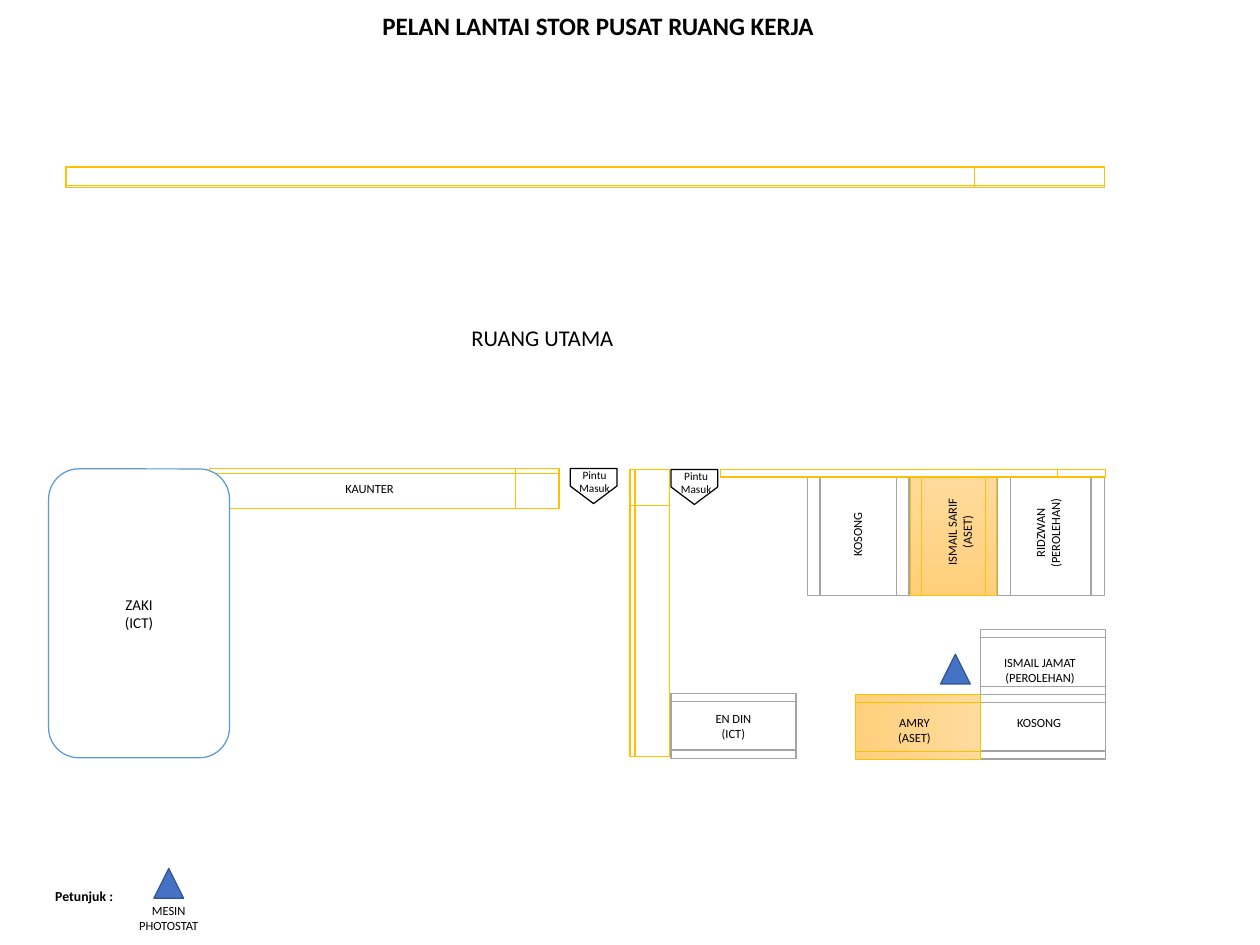
from dataclasses import dataclass
from typing import Any

import pptx
import pptx.dml.color
import pptx.enum.shapes
import pptx.enum.text
import pptx.util

Pt = pptx.util.Pt
RGBColor = pptx.dml.color.RGBColor
Shape = pptx.enum.shapes.MSO_SHAPE
Align = pptx.enum.text.PP_ALIGN
Anchor = pptx.enum.text.MSO_ANCHOR

BLACK = RGBColor(0x00, 0x00, 0x00)
WHITE = RGBColor(0xFF, 0xFF, 0xFF)
GOLD = RGBColor(0xFF, 0xC0, 0x00)
GRAY = RGBColor(0xA5, 0xA5, 0xA5)
SKY = RGBColor(0x5B, 0x9B, 0xD5)
BLUE = RGBColor(0x44, 0x72, 0xC4)
NAVY = RGBColor(0x32, 0x54, 0x91)
ASSET_LIGHT = RGBColor(0xFF, 0xDB, 0x9E)
ASSET_DARK = RGBColor(0xFF, 0xD0, 0x7C)

WALL = Shape.FLOWCHART_INTERNAL_STORAGE
DESK = Shape.FLOWCHART_PREDEFINED_PROCESS
DOOR = Shape.PENTAGON
COPIER = Shape.ISOSCELES_TRIANGLE

DESK_WIDTH, DESK_HEIGHT = 100.1, 51.8
LABEL_LENGTH, ONE_LINE, TWO_LINES = 79.9, 19.4, 31.7


@dataclass
class Area:
    """Bounds as seen on the plan, after any rotation."""
    left: float
    top: float
    width: float
    height: float
    rotation: int = 0

    def frame(self) -> list[Any]:
        width, height = self.width, self.height
        if self.rotation % 180:
            width, height = height, width
        left = self.left + (self.width - width) / 2
        top = self.top + (self.height - height) / 2
        return [Pt(value) for value in (left, top, width, height)]


@dataclass
class Fixture:
    kind: Any
    area: Area
    line: RGBColor = GRAY
    fill: RGBColor | None = WHITE
    weight: float = 1
    flipped: bool = False


@dataclass
class Label:
    lines: list[str]
    area: Area
    size: float = 10
    bold: bool = False
    wrap: bool = True


def apply(target: Any, values: dict[str, Any]) -> None:
    for name, value in values.items():
        setattr(target, name, value)


def write(box: Any, lines: list[str], size: float, bold: bool = False,
          wrap: bool = True, anchor: Any = Anchor.TOP) -> None:
    frame = box.text_frame
    apply(frame, {"word_wrap": wrap, "vertical_anchor": anchor,
                  "auto_size": pptx.enum.text.MSO_AUTO_SIZE.NONE})
    for index, line in enumerate(lines):
        para = frame.add_paragraph() if index else frame.paragraphs[0]
        para.alignment = Align.CENTER if wrap else Align.LEFT
        span = para.add_run()
        span.text = line
        apply(span.font, {"name": "Calibri", "size": Pt(size), "bold": bold})
        span.font.color.rgb = BLACK


def draw_fixture(page: Any, fixture: Fixture) -> Any:
    box = page.shapes.add_shape(fixture.kind, *fixture.area.frame())
    box.rotation = fixture.area.rotation
    box.shadow.inherit = False
    if fixture.fill is None:
        box.fill.gradient()
        box.fill.gradient_angle = 270
        for stop, color in zip(box.fill.gradient_stops, (ASSET_LIGHT, ASSET_DARK)):
            stop.color.rgb = color
        for stop, position in zip(box.fill.gradient_stops, (0, 1)):
            stop.position = position
    else:
        box.fill.solid()
        box.fill.fore_color.rgb = fixture.fill
    box.line.color.rgb = fixture.line
    box.line.width = Pt(fixture.weight)
    if fixture.flipped:
        box._element.spPr.xfrm.set("flipH", "1")
    return box


def draw_label(page: Any, label: Label) -> None:
    box = page.shapes.add_textbox(*label.area.frame())
    box.rotation = label.area.rotation
    write(box, label.lines, label.size, label.bold, label.wrap)


def flat_desk(left: float, top: float) -> Area:
    return Area(left, top, DESK_WIDTH, DESK_HEIGHT, 90)


def upright_desk(left: float, top: float, width: float) -> Area:
    return Area(left, top, width, DESK_WIDTH)


def flat_label(left: float, top: float, height: float = TWO_LINES) -> Area:
    return Area(left, top, LABEL_LENGTH, height)


def upright_label(left: float, top: float, width: float = TWO_LINES) -> Area:
    return Area(left, top, width, LABEL_LENGTH, 270)


FIXTURES = [
    Fixture(WALL, Area(167.8, 375.1, 279.4, 31.7, 90), GOLD),
    Fixture(DOOR, Area(456.1, 374.8, 37.4, 28.1, 90), BLACK),
    Fixture(DESK, flat_desk(784.4, 555.5)),
    Fixture(DESK, upright_desk(645.8, 376.6, 81.4)),
    Fixture(DESK, flat_desk(536.8, 554.8)),
    Fixture(DESK, flat_desk(684.4, 555.5), GOLD, None, 0.5),
    Fixture(DOOR, Area(536.8, 375.5, 37.4, 28.1, 90), BLACK),
    Fixture(DESK, upright_desk(728.6, 375.8, 68.4), GOLD, None, 0.5),
    Fixture(DESK, upright_desk(797.8, 376.6, 85.7)),
    Fixture(DESK, flat_desk(784.4, 503.6)),
    Fixture(WALL, Area(504, 375.8, 31.7, 229.7), GOLD),
    Fixture(WALL, Area(576.4, 375.5, 308.2, 6.5, 90), GOLD, flipped=True),
    Fixture(WALL, Area(52.9, 133.6, 830.9, 16.6, 90), GOLD, flipped=True),
    Fixture(COPIER, Area(752.4, 523.4, 23.8, 23.8), NAVY, BLUE),
    Fixture(COPIER, Area(123.1, 694.8, 23.8, 23.8), NAVY, BLUE),
]

ICT_ROOM = Fixture(Shape.ROUNDED_RECTANGLE, Area(38.9, 375.1, 144.7, 231.1), SKY)

LABELS = [
    Label(["Pintu", "Masuk"], Area(445, 370.8, 61.2, 40.3), 9),
    Label(["Pintu", "Masuk"], Area(526.3, 371.5, 61.2, 40.3), 9),
    Label(["KOSONG"], flat_label(791.3, 568.8, ONE_LINE)),
    Label(["KOSONG"], upright_label(676.1, 387.4, ONE_LINE)),
    Label(["EN DIN", "(ICT)"], Area(548.6, 565.2, 76.3, TWO_LINES)),
    Label(["AMRY", "(ASET)"], Area(693.4, 568.1, 76.3, TWO_LINES)),
    Label(["KAUNTER"], flat_label(255.6, 381.6, ONE_LINE)),
    Label(["ISMAIL SARIF", "(ASET)"], upright_label(752, 385.6)),
    Label(["RIDZWAN", "(PEROLEHAN)"], upright_label(822.6, 386.3)),
    Label(["ISMAIL JAMAT", "(PEROLEHAN)"], flat_label(792, 520.6)),
    Label(["RUANG UTAMA"], Area(370.1, 255.6, 133.2, 28.8), 18, wrap=False),
    Label(["Petunjuk :"], Area(20.9, 706.3, 92.9, 20.9), 11, bold=True),
    Label(["MESIN PHOTOSTAT"], flat_label(95, 718.6)),
]


def main() -> None:
    deck = pptx.Presentation()
    apply(deck, {"slide_width": Pt(1008), "slide_height": Pt(756)})
    page = deck.slides.add_slide(deck.slide_layouts[5])
    title = page.shapes.title
    places = Area(279.4, 5, 398.2, 31.7).frame()
    apply(title, dict(zip(("left", "top", "width", "height"), places)))
    write(title, ["PELAN LANTAI STOR PUSAT RUANG KERJA"], 20, bold=True)
    for fixture in FIXTURES:
        draw_fixture(page, fixture)
    room = draw_fixture(page, ICT_ROOM)
    write(room, ["ZAKI", "(ICT)"], 12, anchor=Anchor.MIDDLE)
    for label in LABELS:
        draw_label(page, label)
    deck.save("out.pptx")


if __name__ == "__main__":
    main()
